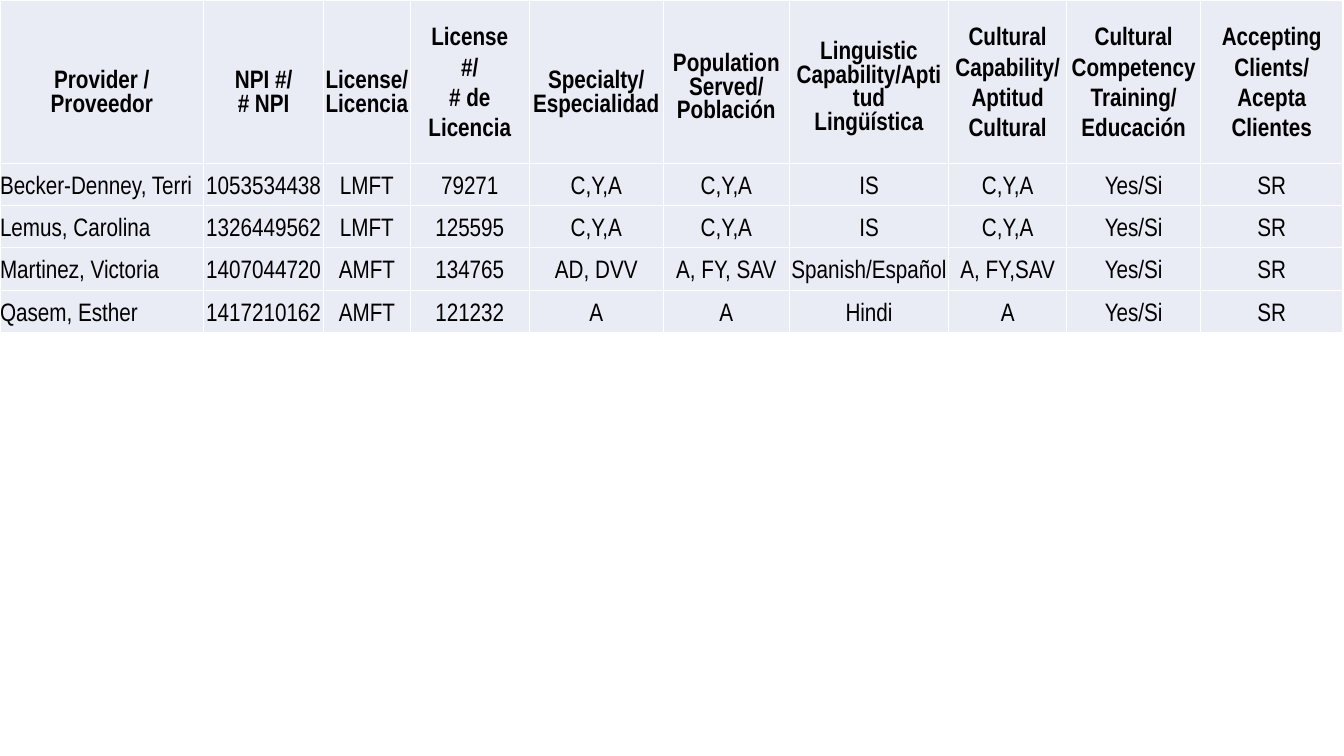
from dataclasses import dataclass

import pptx
import pptx.dml.color
import pptx.enum.text
import pptx.util

Inches = pptx.util.Inches
Pt = pptx.util.Pt
Align = pptx.enum.text.PP_ALIGN

COLORS = {"text": "000000", "cell": "E9EBF5"}
FONT = "Arial Narrow"
LINE = 21.6
HEADER_HEIGHT = 1.62
ROW_HEIGHT = 0.42


@dataclass(frozen=True)
class Column:
    heading: tuple[str, ...]
    width: float
    side: float
    top: float = 0
    line: float | None = LINE


@dataclass(frozen=True)
class Provider:
    name: str
    npi: str
    license: str
    number: str
    specialty: str
    population: str
    language: str
    culture: str
    training: str = "Yes/Si"
    accepting: str = "SR"

    def values(self) -> tuple[str, ...]:
        return (self.name, self.npi, self.license, self.number, self.specialty,
                self.population, self.language, self.culture, self.training,
                self.accepting)


COLUMNS = [
    Column(("Provider / Proveedor",), 2.02, 0.5, 0.24, None),
    Column(("NPI #/ # NPI",), 1.19, 0.3, 0.24, None),
    Column(("License/ Licencia",), 0.86, 0, 0.24, None),
    Column(("License #/", "# de Licencia"), 1.18, 0.11),
    Column(("Specialty/ Especialidad",), 1.33, 0.03, 0.24, None),
    Column(("Population Served/ Población",), 1.25, 0.08, 0.14, None),
    Column(("Linguistic Capability/Aptitud Lingüística",), 1.58, 0.07, 0.14, None),
    Column(("Cultural Capability/ Aptitud Cultural",), 1.17, 0.05),
    Column(("Cultural Competency Training/ Educación",), 1.33, 0.04),
    Column(("Accepting Clients/ Acepta Clientes",), 1.41, 0.18),
]

PROVIDERS = [
    Provider("Becker-Denney, Terri", "1053534438", "LMFT", "79271",
             "C,Y,A", "C,Y,A", "IS", "C,Y,A"),
    Provider("Lemus, Carolina", "1326449562", "LMFT", "125595",
             "C,Y,A", "C,Y,A", "IS", "C,Y,A"),
    Provider("Martinez, Victoria", "1407044720", "AMFT", "134765",
             "AD, DVV", "A, FY, SAV", "Spanish/Español", "A, FY,SAV"),
    Provider("Qasem, Esther", "1417210162", "AMFT", "121232",
             "A", "A", "Hindi", "A"),
]


def fill_cell(cell: pptx.table._Cell, lines: tuple[str, ...], align: Align,
              bold: bool = False, side: float = 0, top: float = 0,
              line: float | None = LINE) -> None:
    cell.fill.solid()
    cell.fill.fore_color.rgb = pptx.dml.color.RGBColor.from_string(COLORS["cell"])
    cell.vertical_anchor = pptx.enum.text.MSO_ANCHOR.MIDDLE
    cell.margin_left = cell.margin_right = Inches(side)
    cell.margin_top, cell.margin_bottom = Inches(top), Inches(0)
    frame = cell.text_frame
    for index, text in enumerate(lines):
        para = frame.add_paragraph() if index else frame.paragraphs[0]
        para.alignment = align
        if line is not None:
            para.line_spacing = Pt(line)
        span = para.add_run()
        span.text = text
        span.font.name = FONT
        span.font.size = Pt(18)
        span.font.bold = bold
        span.font.color.rgb = pptx.dml.color.RGBColor.from_string(COLORS["text"])


def add_provider_table(page: pptx.slide.Slide) -> None:
    width = sum(column.width for column in COLUMNS)
    height = HEADER_HEIGHT + ROW_HEIGHT * len(PROVIDERS)
    table = page.shapes.add_table(
        len(PROVIDERS) + 1, len(COLUMNS),
        Inches(0), Inches(0), Inches(width), Inches(height)).table
    table.first_row = table.horz_banding = False

    table.rows[0].height = Inches(HEADER_HEIGHT)
    for index, column in enumerate(COLUMNS):
        table.columns[index].width = Inches(column.width)
        fill_cell(table.cell(0, index), column.heading, Align.CENTER, True,
                  column.side, column.top, column.line)

    for row, provider in enumerate(PROVIDERS, start=1):
        table.rows[row].height = Inches(ROW_HEIGHT)
        for index, value in enumerate(provider.values()):
            align = Align.CENTER if index else Align.LEFT
            fill_cell(table.cell(row, index), (value,), align)


def main() -> None:
    deck = pptx.Presentation()
    deck.slide_width, deck.slide_height = Inches(13.33), Inches(7.5)
    page = deck.slides.add_slide(deck.slide_layouts[6])
    add_provider_table(page)
    deck.save("out.pptx")


if __name__ == "__main__":
    main()
